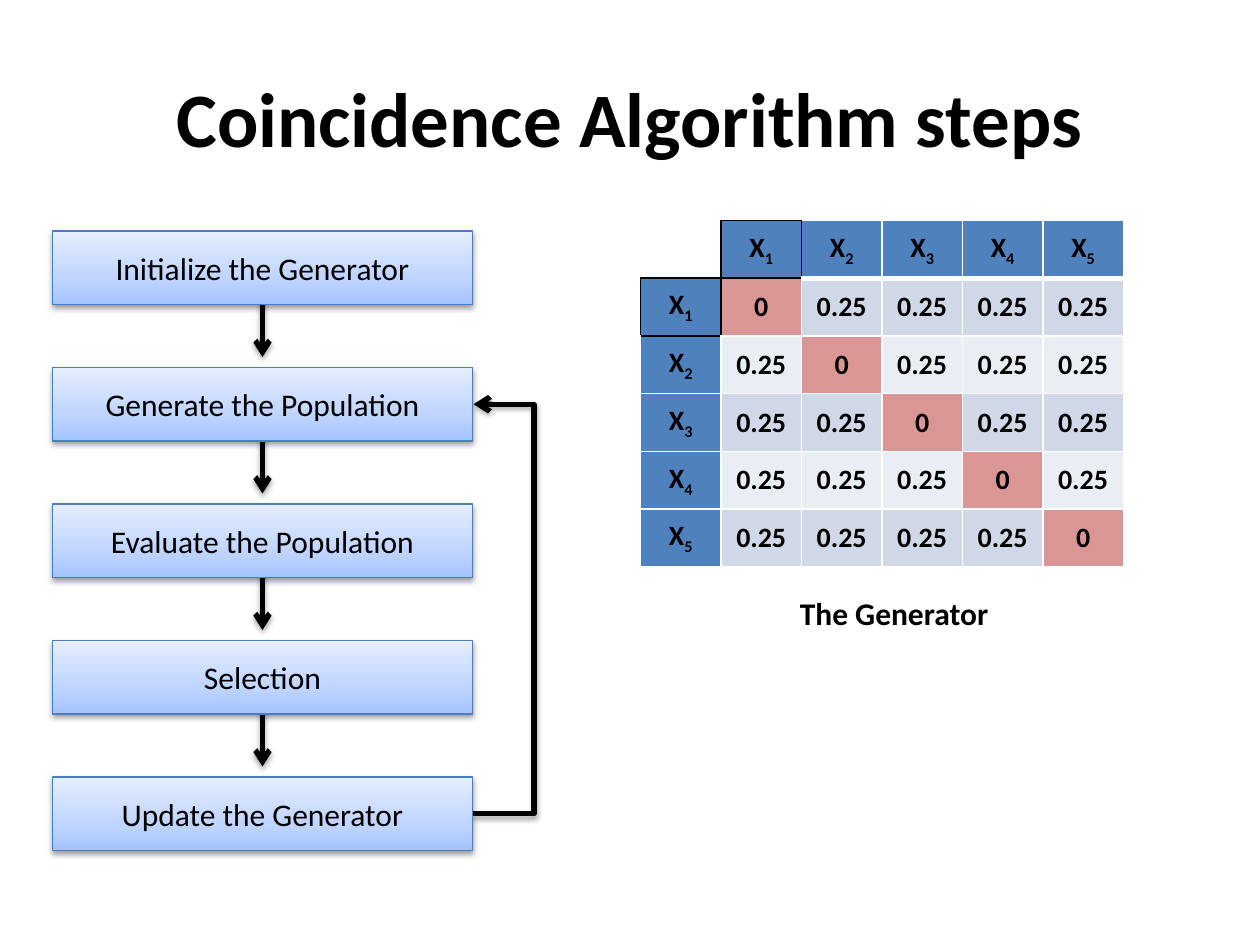
from dataclasses import dataclass

from pptx import Presentation
from pptx.dml.color import RGBColor
from pptx.enum.shapes import MSO_CONNECTOR, MSO_SHAPE
from pptx.enum.text import MSO_ANCHOR, PP_ALIGN
from pptx.oxml import parse_xml
from pptx.oxml.ns import nsdecls, qn
from pptx.util import Emu, Pt

PX_PER_INCH = 120
EMU_PER_PX = 914400 // PX_PER_INCH
STRAIGHT = MSO_CONNECTOR.STRAIGHT
ELBOW = MSO_CONNECTOR.ELBOW
RECT = MSO_SHAPE.RECTANGLE
MIDDLE = MSO_ANCHOR.MIDDLE
CENTER = PP_ALIGN.CENTER
LEFT = PP_ALIGN.LEFT


@dataclass(frozen=True)
class Theme:
    font: str = "Calibri"
    ink: str = "000000"
    paper: str = "FFFFFF"
    box_line: str = "4B7EBC"
    box_stops: tuple = ((0, "A4C4FF"), (35, "BFD4FF"), (100, "E6EEFF"))
    header: str = "4F81BD"
    diagonal: str = "D99694"
    bands: tuple = ("E9EDF4", "D0D8E8")
    title_size: int = 44
    body_size: int = 18
    cell_size: int = 16


THEME = Theme()
STEPS = (
    "Initialize the Generator",
    "Generate the Population",
    "Evaluate the Population",
    "Selection",
    "Update the Generator",
)
BOX_LEFT, BOX_TOP, BOX_WIDTH, BOX_HEIGHT, BOX_PITCH = 50, 220, 400, 70, 130
LOOP_REACH = 59
VARIABLES = 5
OUTLINED_CELLS = {(0, 1), (1, 0)}
SIDES = (("a:lnL", 0, -1), ("a:lnR", 0, 1), ("a:lnT", -1, 0), ("a:lnB", 1, 0))


def px(n):
    return Emu(n * EMU_PER_PX)


def rgb(color):
    return RGBColor.from_string(color)


def write(p, text, size=THEME.body_size, bold=False, align=CENTER, subscript=False):
    p.alignment = align
    r = p.add_run()
    r.text = text
    r.font.name = THEME.font
    r.font.size = Pt(size)
    r.font.bold = bold
    r.font.color.rgb = rgb(THEME.ink)
    if subscript:
        r.font._element.set("baseline", "-25000")


def add_label(slide, box, text, wrap=True, anchor=MIDDLE, **fmt):
    tf = slide.shapes.add_textbox(*map(px, box)).text_frame
    tf.word_wrap = wrap
    tf.vertical_anchor = anchor
    write(tf.paragraphs[0], text, **fmt)


def add_shadow(sp, distance, alpha):
    sp._element.spPr.append(parse_xml(
        f'<a:effectLst {nsdecls("a")}><a:outerShdw blurRad="40000" dist="{distance}" '
        f'dir="5400000" rotWithShape="0"><a:srgbClr val="{THEME.ink}">'
        f'<a:alpha val="{alpha * 1000}"/></a:srgbClr></a:outerShdw></a:effectLst>'
    ))


def add_arrow(slide, kind, start, end):
    sp = slide.shapes.add_connector(kind, *map(px, (*start, *end)))
    sp.line.color.rgb = rgb(THEME.ink)
    sp.line.width = Pt(3)
    sp.line._ln.append(parse_xml(f'<a:tailEnd {nsdecls("a")} type="arrow"/>'))
    add_shadow(sp, 23000, 35)
    return sp


def add_loop(slide, start, end):
    sp = add_arrow(slide, ELBOW, start, end)
    geometry = sp._element.spPr.find(qn("a:prstGeom"))
    bend = LOOP_REACH * 100000 // (end[0] - start[0])
    geometry.find(qn("a:avLst")).append(parse_xml(
        f'<a:gd {nsdecls("a")} name="adj1" fmla="val {bend}"/>'
    ))


def add_step(slide, top, text):
    sp = slide.shapes.add_shape(RECT, *map(px, (BOX_LEFT, top, BOX_WIDTH, BOX_HEIGHT)))
    stops = "".join(
        f'<a:gs pos="{pos * 1000}"><a:srgbClr val="{color}"/></a:gs>'
        for pos, color in THEME.box_stops
    )
    sp._element.spPr.find(qn("a:prstGeom")).addnext(parse_xml(
        f'<a:gradFill {nsdecls("a")} rotWithShape="1"><a:gsLst>{stops}</a:gsLst>'
        f'<a:lin ang="16200000" scaled="0"/></a:gradFill>'
    ))
    sp.line.color.rgb = rgb(THEME.box_line)
    sp.line.width = Pt(0.75)
    add_shadow(sp, 20000, 38)
    tf = sp.text_frame
    tf.word_wrap = True
    tf.vertical_anchor = MIDDLE
    write(tf.paragraphs[0], text)


def add_flow(slide):
    tops = [BOX_TOP + i * BOX_PITCH for i in range(len(STEPS))]
    center = BOX_LEFT + BOX_WIDTH // 2
    right = BOX_LEFT + BOX_WIDTH
    half = BOX_HEIGHT // 2
    for top in tops[:-1]:
        add_arrow(slide, STRAIGHT, (center, top + 60), (center, top + 120))
    add_loop(slide, (right, tops[-1] + half), (right + 1, tops[1] + half))
    for top, text in zip(tops, STEPS):
        add_step(slide, top, text)


def set_borders(cell, row, col):
    tcPr = cell._tc.get_or_add_tcPr()
    for i, (tag, down, across) in enumerate(SIDES):
        outlined = OUTLINED_CELLS & {(row, col), (row + down, col + across)}
        color = THEME.ink if outlined else THEME.paper
        heavy = row == 0 and col > 1 and tag == "a:lnB"
        tcPr.insert(i, parse_xml(
            f'<{tag} {nsdecls("a")} w="{Pt(3 if heavy else 1)}"><a:solidFill>'
            f'<a:srgbClr val="{color}"/></a:solidFill></{tag}>'
        ))


def fill_cell(cell, row, col):
    fmt = {"size": THEME.cell_size, "bold": True}
    p = cell.text_frame.paragraphs[0]
    if row == col == 0:
        cell.fill.background()
        return
    cell.vertical_anchor = MIDDLE
    if row == 0 or col == 0:
        color = THEME.header
        write(p, "X", **fmt)
        write(p, str(row + col), subscript=True, **fmt)
    elif row == col:
        color = THEME.diagonal
        write(p, "0", **fmt)
    else:
        color = THEME.bands[row % 2]
        write(p, "0.25", **fmt)
    cell.fill.solid()
    cell.fill.fore_color.rgb = rgb(color)


def add_generator(slide, box):
    n = VARIABLES + 1
    table = slide.shapes.add_table(n, n, *map(px, box)).table
    table.first_row = False
    table.horz_banding = False
    for row in range(n):
        for col in range(n):
            cell = table.cell(row, col)
            fill_cell(cell, row, col)
            set_borders(cell, row, col)


def main():
    prs = Presentation()
    prs.slide_width = px(1200)
    prs.slide_height = px(900)
    slide = prs.slides.add_slide(prs.slide_layouts[6])
    add_label(slide, (60, 36, 1080, 150), "Coincidence Algorithm steps",
              size=THEME.title_size, bold=True)
    add_flow(slide)
    add_generator(slide, (610, 210, 460, 330))
    add_label(slide, (750, 560, 238, 48), "The Generator", wrap=False,
              bold=True, align=LEFT)
    prs.save("out.pptx")


if __name__ == "__main__":
    main()
